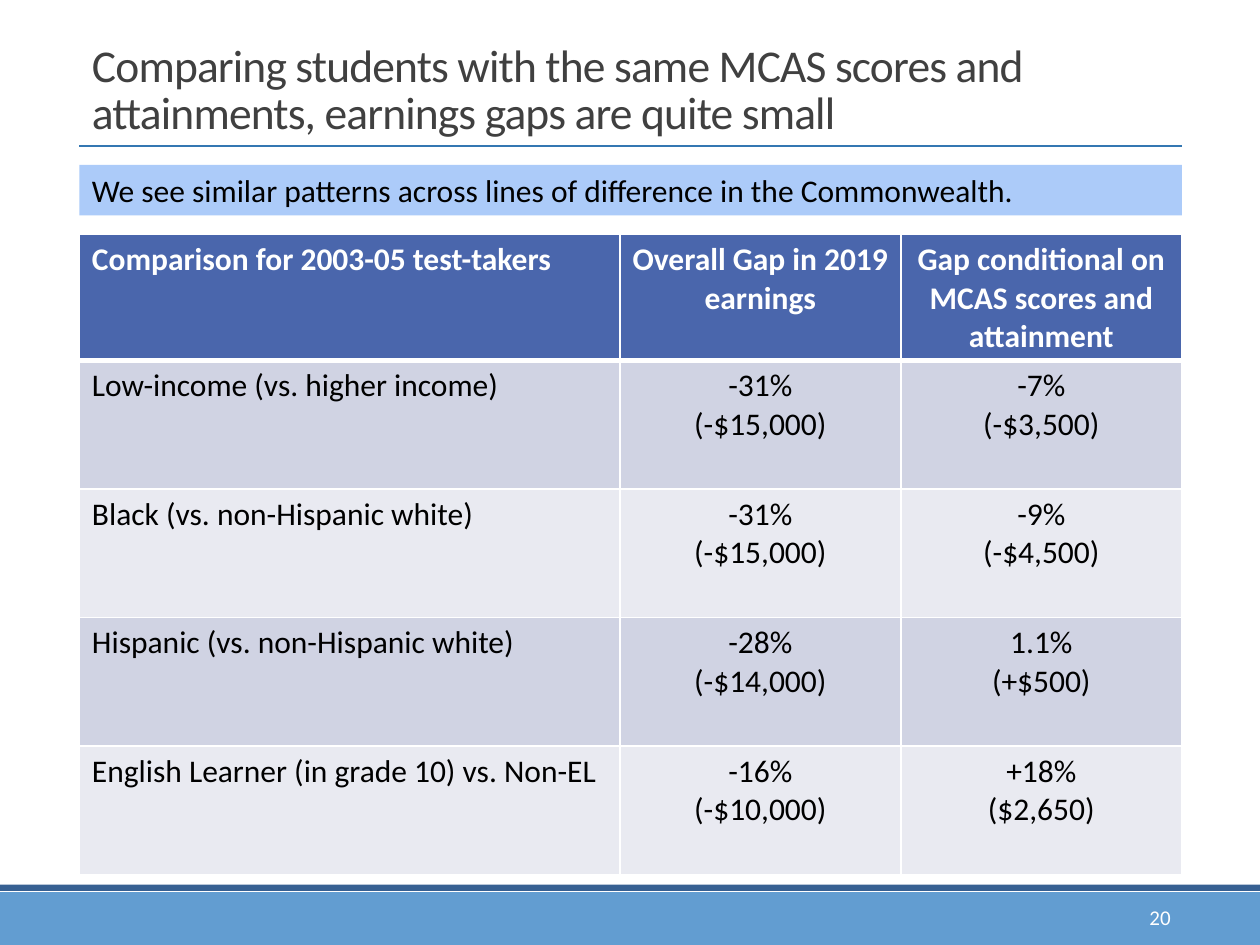
from lxml.etree import SubElement
from pptx import Presentation
from pptx.dml.color import RGBColor
from pptx.enum.shapes import MSO_CONNECTOR, MSO_SHAPE
from pptx.enum.text import MSO_ANCHOR, MSO_AUTO_SIZE, PP_ALIGN
from pptx.oxml.ns import qn
from pptx.util import Inches, Pt

WHITE = RGBColor(0xFF, 0xFF, 0xFF)
BLACK = RGBColor(0x00, 0x00, 0x00)
GRAY = RGBColor(0x40, 0x40, 0x40)
FOOTER_BLUE = RGBColor(0x62, 0x9D, 0xD1)
STRIPE_BLUE = RGBColor(0x37, 0x60, 0x92)
RULE_BLUE = RGBColor(0x34, 0x77, 0xB2)
CALLOUT_BLUE = RGBColor(0xAC, 0xCB, 0xF9)
HEADER_BLUE = RGBColor(0x4A, 0x66, 0xAC)
BANDS = (RGBColor(0xD0, 0xD3, 0xE3), RGBColor(0xE9, 0xEA, 0xF1))

LEFT, WIDTH = 0.63, 8.75
COLUMNS = (4.29, 2.23, 2.23)
HEADER_HEIGHT, ROW_HEIGHT = 1, 1.02
ROWS = (
    ("Comparison for 2003-05 test-takers", "Overall Gap in 2019 earnings",
     "Gap conditional on MCAS scores and attainment"),
    ("Low-income (vs. higher income)", "-31%\n(-$15,000)", "-7%\n(-$3,500)"),
    ("Black (vs. non-Hispanic white)", "-31%\n(-$15,000)", "-9%\n(-$4,500)"),
    ("Hispanic (vs. non-Hispanic white)", "-28%\n(-$14,000)", "1.1%\n(+$500)"),
    ("English Learner (in grade 10) vs. Non-EL", "-16%\n(-$10,000)", "+18%\n($2,650)"),
)


class SlideBuilder:
    font = "Calibri"

    def __init__(self, prs):
        self.s = prs.slides.add_slide(prs.slide_layouts[5])

    def format_text(self, tf, size, color, align=PP_ALIGN.LEFT, bold=False):
        tf.word_wrap = True
        for p in tf.paragraphs:
            p.alignment = align
            for r in p.runs:
                r.font.name = self.font
                r.font.size = Pt(size)
                r.font.bold = bold
                r.font.color.rgb = color

    def title(self, text, x, y, w, h):
        sp = self.s.shapes.title
        sp.left, sp.top, sp.width, sp.height = map(Inches, (x, y, w, h))
        tf = sp.text_frame
        tf.text = text
        tf.auto_size = MSO_AUTO_SIZE.NONE
        tf.vertical_anchor = MSO_ANCHOR.BOTTOM
        self.format_text(tf, 26, GRAY)
        p = tf.paragraphs[0]
        p.line_spacing = 0.85
        p.runs[0].font._element.set("spc", "-50")

    def bar(self, x, y, w, h, fill, text=""):
        sp = self.s.shapes.add_shape(MSO_SHAPE.RECTANGLE, *map(Inches, (x, y, w, h)))
        sp.shadow.inherit = False
        sp.fill.solid()
        sp.fill.fore_color.rgb = fill
        sp.line.fill.background()
        if text:
            tf = sp.text_frame
            tf.text = text
            tf.vertical_anchor = MSO_ANCHOR.TOP
            self.format_text(tf, 18, BLACK)

    def rule(self, x, y, w, color):
        line = self.s.shapes.add_connector(
            MSO_CONNECTOR.STRAIGHT, *map(Inches, (x, y, x + w, y)))
        line.line.color.rgb = color
        line.line.width = Pt(1)
        SubElement(line._element.spPr, qn("a:effectLst"))

    def page_number(self, text, x, y, w, h):
        tf = self.s.shapes.add_textbox(*map(Inches, (x, y, w, h))).text_frame
        tf.text = text
        tf.vertical_anchor = MSO_ANCHOR.MIDDLE
        self.format_text(tf, 12, WHITE, PP_ALIGN.RIGHT)

    def borders(self, cell, bottom):
        tcPr = cell._tc.get_or_add_tcPr()
        for side, width in (("L", 1), ("R", 1), ("T", 1), ("B", bottom)):
            ln = SubElement(tcPr, qn(f"a:ln{side}"), w=str(Pt(width)))
            fill = SubElement(ln, qn("a:solidFill"))
            SubElement(fill, qn("a:srgbClr"), val=str(WHITE))

    def table(self, rows, x, y):
        height = HEADER_HEIGHT + ROW_HEIGHT * (len(rows) - 1)
        table = self.s.shapes.add_table(
            len(rows), len(COLUMNS), *map(Inches, (x, y, WIDTH, height))).table
        for column, width in zip(table.columns, COLUMNS):
            column.width = Inches(width)
        for i, row in enumerate(rows):
            header = i == 0
            table.rows[i].height = Inches(HEADER_HEIGHT if header else ROW_HEIGHT)
            for j, text in enumerate(row):
                cell = table.cell(i, j)
                self.borders(cell, 3 if header else 1)
                cell.fill.solid()
                cell.fill.fore_color.rgb = HEADER_BLUE if header else BANDS[(i - 1) % 2]
                cell.text_frame.text = text
                self.format_text(cell.text_frame, 18, WHITE if header else BLACK,
                                 PP_ALIGN.CENTER if j else PP_ALIGN.LEFT, header)


def main():
    prs = Presentation()
    prs.slide_width, prs.slide_height = Inches(10), Inches(7.5)
    b = SlideBuilder(prs)
    b.bar(0, 7.08, 10, 0.42, FOOTER_BLUE)
    b.bar(0, 7.02, 10, 0.05, STRIPE_BLUE)
    b.rule(LEFT, 1.16, WIDTH, RULE_BLUE)
    b.page_number("20", 8.31, 7.18, 1.08, 0.2)
    b.title("Comparing students with the same MCAS scores and attainments, "
            "earnings gaps are quite small", LEFT, 0.31, WIDTH, 0.84)
    b.table(ROWS, LEFT, 1.86)
    b.bar(LEFT, 1.31, WIDTH, 0.4, CALLOUT_BLUE,
          "We see similar patterns across lines of difference in the Commonwealth.")
    prs.save("out.pptx")


if __name__ == "__main__":
    main()
